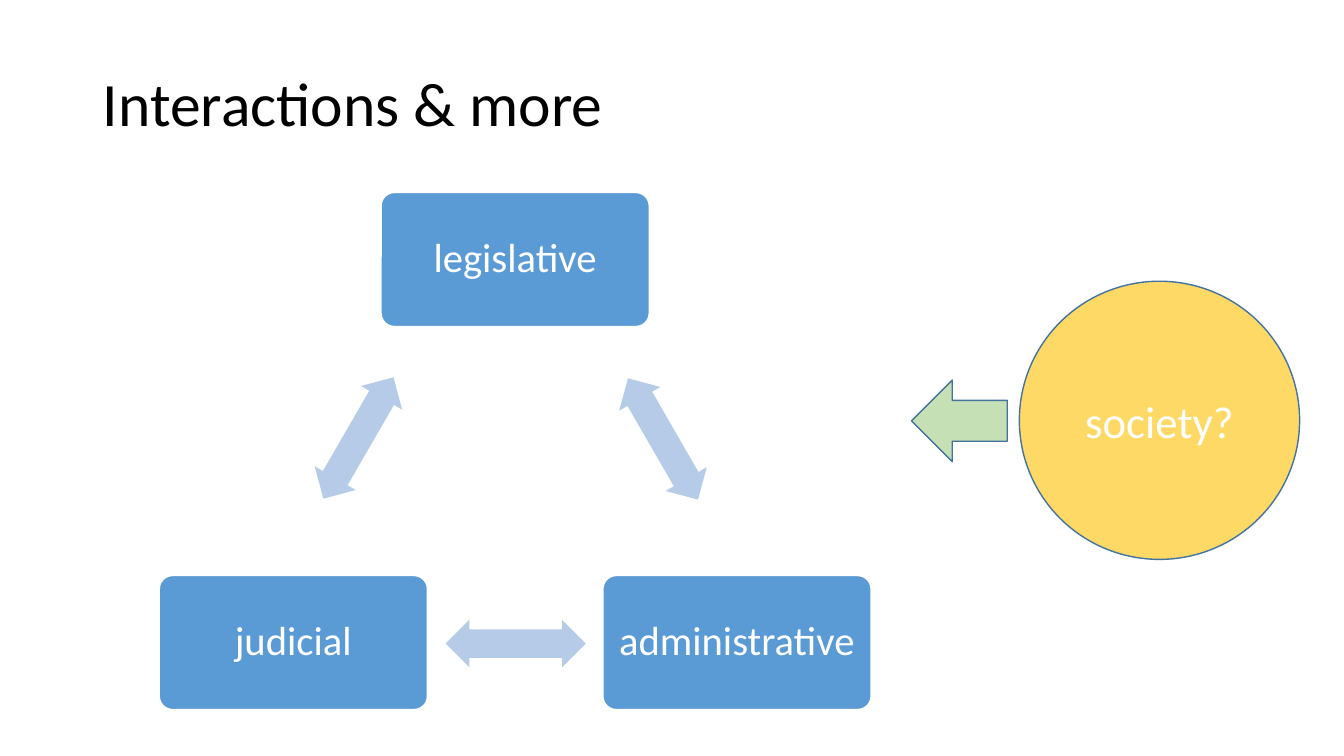
from pptx import Presentation
from pptx.dml.color import RGBColor
from pptx.enum.shapes import MSO_SHAPE as Shape
from pptx.enum.text import MSO_ANCHOR as Anchor, MSO_AUTO_SIZE as AutoSize, PP_ALIGN as Align
from pptx.util import Inches, Pt

COLORS = {
    "black": "000000",
    "white": "FFFFFF",
    "branch": "5B9BD5",
    "link": "B5CBE7",
    "society": "FFD966",
    "influence": "C5E0B4",
    "outline": "43739E",
}


def add_shape(kind, left, top, width, height, fill, line=None):
    shape = slide.shapes.add_shape(
        kind, Inches(left), Inches(top), Inches(width), Inches(height))
    shape.shadow.inherit = False
    shape.fill.solid()
    shape.fill.fore_color.rgb = RGBColor.from_string(COLORS[fill])
    if line:
        shape.line.color.rgb = RGBColor.from_string(COLORS[line])
        shape.line.width = Pt(1)
    else:
        shape.line.fill.background()
    return shape


def write_text(shape, text, size, color, align):
    frame = shape.text_frame
    frame.text = text
    frame.word_wrap = True
    frame.auto_size = AutoSize.NONE
    frame.vertical_anchor = Anchor.MIDDLE
    paragraph = frame.paragraphs[0]
    paragraph.alignment = align
    font = paragraph.runs[0].font
    font.name = "Calibri"
    font.size = Pt(size)
    font.color.rgb = RGBColor.from_string(COLORS[color])
    return paragraph


presentation = Presentation()
presentation.slide_width = Inches(13.33)
presentation.slide_height = Inches(7.5)
slide = presentation.slides.add_slide(presentation.slide_layouts[5])

# Title
title = slide.shapes.title
title.left, title.top = Inches(0.92), Inches(0.33)
title.width, title.height = Inches(11.5), Inches(1.45)
write_text(title, "Interactions & more", 44, "black", Align.LEFT).line_spacing = 0.9

# Three branches of government
for name, left, top in [
    ("legislative", 3.78, 1.91),
    ("administrative", 5.98, 5.71),
    ("judicial", 1.58, 5.71),
]:
    box = add_shape(Shape.ROUNDED_RECTANGLE, left, top, 2.66, 1.33, "branch", "white")
    box.adjustments[0] = 0.1
    write_text(box, name, 29, "white", Align.CENTER).line_spacing = 0.9

# Two-way arrows between the branches
for left, top, angle in [(5.88, 4.12, 60), (4.42, 6.15, 180), (2.86, 4.11, 300)]:
    arrow = add_shape(Shape.LEFT_RIGHT_ARROW, left, top, 1.39, 0.47, "link")
    arrow.adjustments[0] = 0.6
    arrow.adjustments[1] = 0.5
    arrow.rotation = angle

# Society and its influence
society = add_shape(
    Shape.FLOWCHART_CONNECTOR, 10.11, 2.79, 2.78, 2.76, "society", "outline")
write_text(society, "society?", 32, "white", Align.CENTER)
add_shape(Shape.LEFT_ARROW, 9.04, 3.77, 0.95, 0.81, "influence", "outline")

presentation.save("out.pptx")
